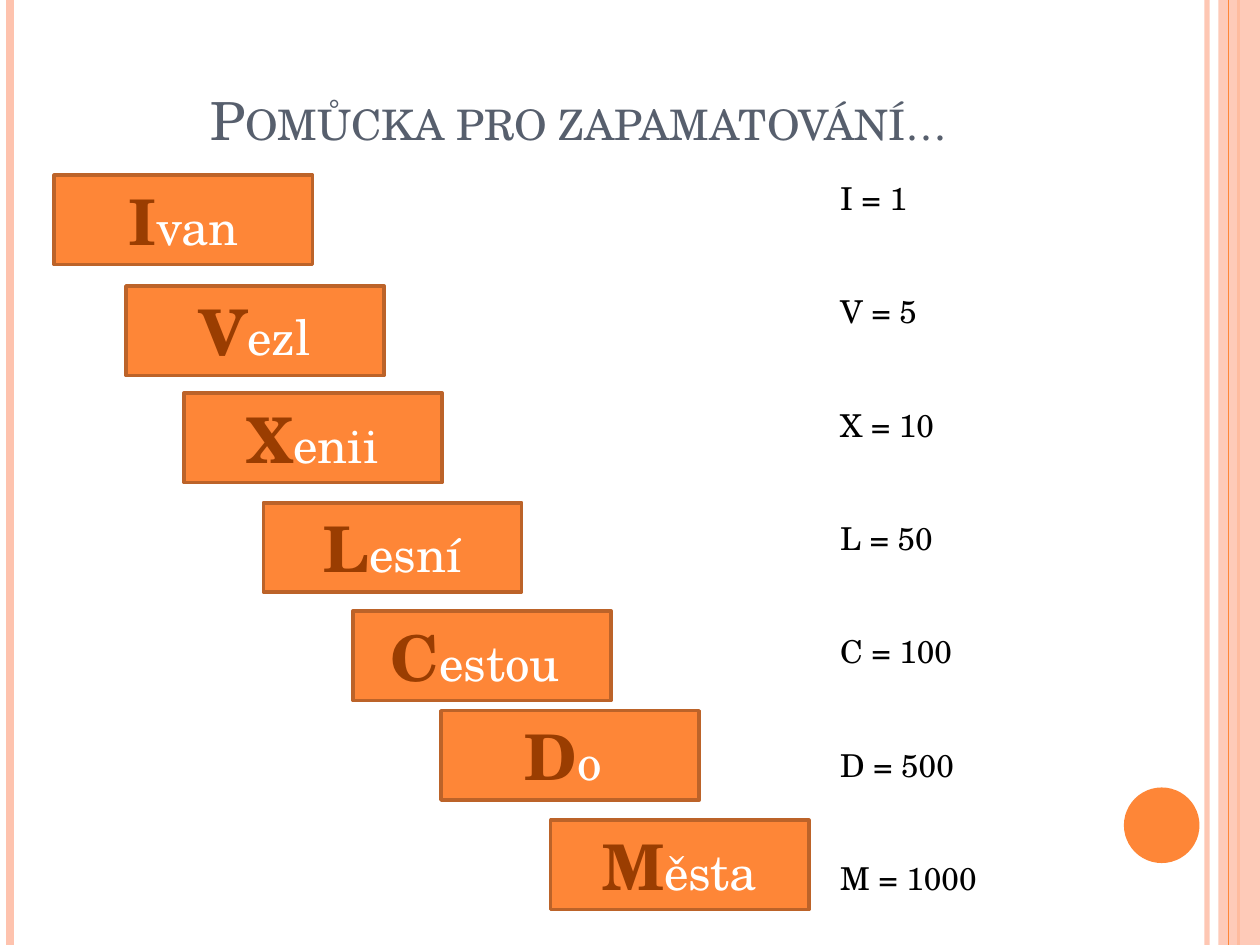
from typing import NamedTuple

import pptx
import pptx.dml.color
import pptx.enum.shapes
import pptx.enum.text
import pptx.oxml.ns
import pptx.util
from lxml import etree

RGBColor = pptx.dml.color.RGBColor
Shape = pptx.enum.shapes.MSO_SHAPE
Align = pptx.enum.text.PP_ALIGN
Anchor = pptx.enum.text.MSO_ANCHOR

ORANGE = RGBColor(0xFE, 0x86, 0x37)
PEACH = RGBColor(0xFE, 0xC3, 0xAE)
RUST = RGBColor(0xBC, 0x63, 0x29)
BROWN = RGBColor(0x9A, 0x3D, 0x01)
SLATE = RGBColor(0x57, 0x5F, 0x6D)
WHITE = RGBColor(0xFF, 0xFF, 0xFF)
BLACK = RGBColor(0x00, 0x00, 0x00)

FACE = "TeX Gyre Schola"
COLUMNS, ROWS = 100, 75
CELL = pptx.util.Inches(0.1)


class Area(NamedTuple):
    """A rectangle in grid columns and rows."""

    column: float
    row: float
    width: float
    height: float

    def lengths(self) -> list[int]:
        return [round(cells * CELL) for cells in self]


class Stripe(NamedTuple):
    column: float
    weight: float
    color: RGBColor
    opacity: int = 100


class Step(NamedTuple):
    numeral: str
    ending: str
    value: int
    column: float
    row: float


STEP_WIDTH, STEP_HEIGHT = 20.5, 7.1
STRIPES = [
    Stripe(95.8, 3, PEACH, 93),
    Stripe(0.8, 4.5, PEACH),
    Stripe(98.3, 1.5, ORANGE),
]
INNER_STRIPE = Stripe(97.5, 0.75, ORANGE)
STEPS = [
    Step("I", "van", 1, 4.3, 13.9),
    Step("V", "ezl", 5, 10, 22.7),
    Step("X", "enii", 10, 14.6, 31.2),
    Step("L", "esní", 50, 20.9, 39.9),
    Step("C", "estou ", 100, 28, 48.5),
    Step("D", "o ", 500, 35, 56.4),
    Step("M", "ěsta", 1000, 43.7, 65.1),
]


def set_opacity(properties, percent: int) -> None:
    color = properties.find(".//" + pptx.oxml.ns.qn("a:srgbClr"))
    alpha = etree.SubElement(color, pptx.oxml.ns.qn("a:alpha"))
    alpha.set("val", str(percent * 1000))


def draw_stripe(slide, stripe: Stripe) -> None:
    x = round(stripe.column * CELL)
    line = slide.shapes.add_connector(
        pptx.enum.shapes.MSO_CONNECTOR.STRAIGHT, x, 0, x, ROWS * CELL
    )
    line.line.color.rgb = stripe.color
    line.line.width = pptx.util.Pt(stripe.weight)
    properties = line._element.spPr
    if stripe.opacity < 100:
        set_opacity(properties, stripe.opacity)
    etree.SubElement(properties, pptx.oxml.ns.qn("a:effectLst"))


def draw_solid(slide, kind: Shape, area: Area, color: RGBColor):
    """Draw a filled shape without outline or shadow."""
    solid = slide.shapes.add_shape(kind, *area.lengths())
    solid.shadow.inherit = False
    solid.fill.solid()
    solid.fill.fore_color.rgb = color
    solid.line.fill.background()
    return solid


def draw_frame(slide) -> None:
    for stripe in STRIPES:
        draw_stripe(slide, stripe)
    band = draw_solid(slide, Shape.RECTANGLE, Area(96.7, 0, 3.3, ROWS), PEACH)
    set_opacity(band._element.spPr, 87)
    draw_stripe(slide, INNER_STRIPE)
    draw_solid(slide, Shape.OVAL, Area(89.2, 62.5, 6, 6), ORANGE)


def style_paragraph(paragraph, size: float, color: RGBColor) -> None:
    paragraph.font.name = FACE
    paragraph.font.size = pptx.util.Pt(size)
    paragraph.font.color.rgb = color


def draw_title(slide, wording: str) -> None:
    title = slide.shapes.add_textbox(*Area(5.1, 0, 81.7, 12.5).lengths())
    title.text_frame.word_wrap = True
    title.text_frame.vertical_anchor = Anchor.BOTTOM
    heading = title.text_frame.paragraphs[0]
    heading.text = wording
    heading.alignment = Align.CENTER
    style_paragraph(heading, 30, SLATE)
    heading.font._element.set("cap", "small")


def draw_step(slide, step: Step) -> None:
    area = Area(step.column, step.row, STEP_WIDTH, STEP_HEIGHT)
    box = draw_solid(slide, Shape.RECTANGLE, area, ORANGE)
    box.line.color.rgb = RUST
    box.line.width = pptx.util.Pt(2)
    box.text_frame.word_wrap = True
    box.text_frame.vertical_anchor = Anchor.MIDDLE
    word = box.text_frame.paragraphs[0]
    word.alignment = Align.CENTER
    word.font.name = FACE
    for part, size, color, bold in (
        (step.numeral, 36, BROWN, True),
        (step.ending, 28, WHITE, False),
    ):
        run = word.add_run()
        run.text = part
        run.font.size = pptx.util.Pt(size)
        run.font.color.rgb = color
        run.font.bold = bold


def draw_values(slide, steps: list[Step]) -> None:
    values = slide.shapes.add_textbox(*Area(65.7, 13.7, 19.7, 58.6).lengths())
    frame = values.text_frame
    frame.word_wrap = True
    for index, step in enumerate(steps):
        equation = frame.add_paragraph() if index else frame.paragraphs[0]
        equation.text = f"{step.numeral} = {step.value}"
        equation.space_before = pptx.util.Pt(43.2 if index else 0)
        style_paragraph(equation, 18, BLACK)


def main() -> None:
    deck = pptx.Presentation()
    deck.slide_width = COLUMNS * CELL
    deck.slide_height = ROWS * CELL
    slide = deck.slides.add_slide(deck.slide_layouts[6])
    draw_frame(slide)
    draw_title(slide, "Pomůcka pro zapamatování…")
    for step in STEPS:
        draw_step(slide, step)
    draw_values(slide, STEPS)
    deck.save("out.pptx")


if __name__ == "__main__":
    main()
